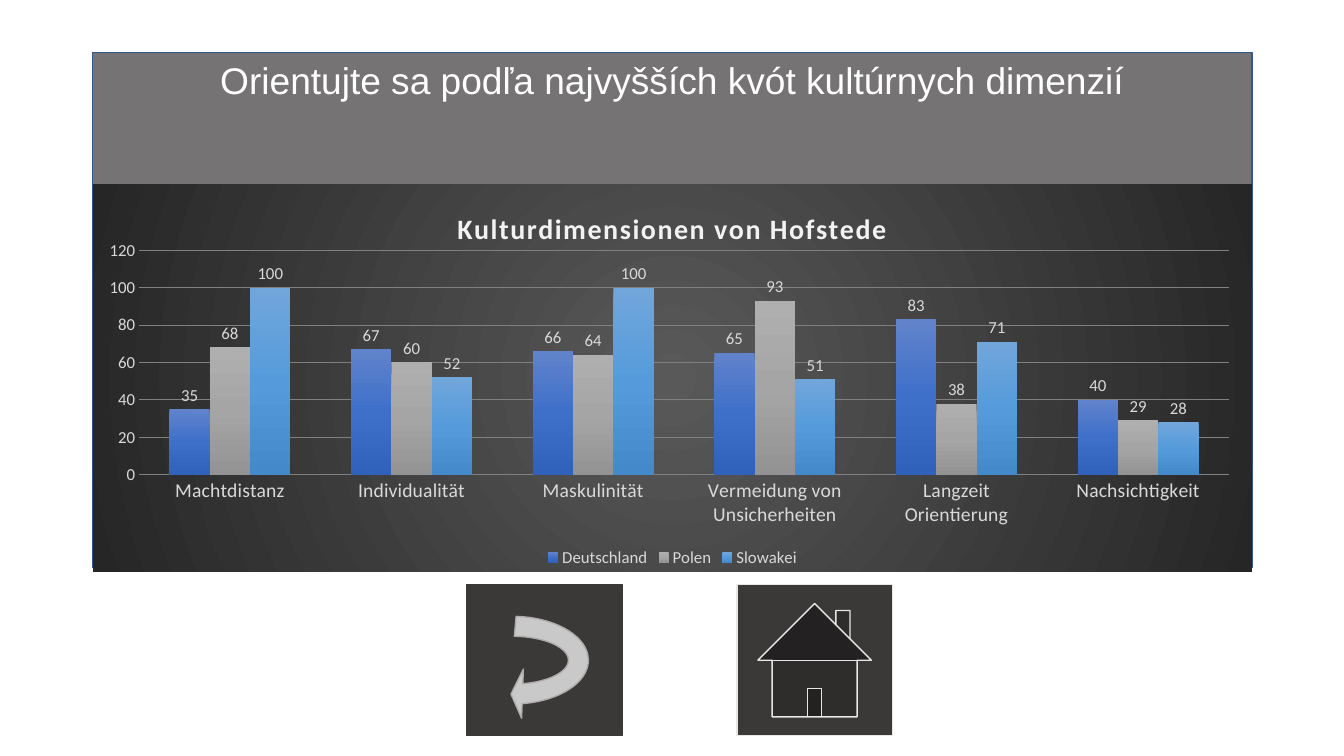
from lxml import etree
from pptx import Presentation
from pptx.chart.data import CategoryChartData
from pptx.dml.color import RGBColor
from pptx.enum.chart import XL_CHART_TYPE, XL_LABEL_POSITION, XL_LEGEND_POSITION, XL_TICK_MARK
from pptx.enum.shapes import MSO_SHAPE
from pptx.enum.text import MSO_ANCHOR, PP_ALIGN
from pptx.oxml import parse_xml
from pptx.oxml.ns import nsdecls, qn
from pptx.util import Inches, Pt

WHITE = RGBColor(0xFF, 0xFF, 0xFF)
PALE = RGBColor(0xF2, 0xF2, 0xF2)
LIGHT = RGBColor(0xD9, 0xD9, 0xD9)
DARK = RGBColor(0x3B, 0x38, 0x38)
SILVER = RGBColor(0xC9, 0xC9, 0xC9)
EDGE = RGBColor(0xAF, 0xAB, 0xAB)
FRAME = RGBColor(0x32, 0x54, 0x91)
HOME = RGBColor(0xE7, 0xE6, 0xE6)
GRID = RGBColor(0x80, 0x80, 0x80)
GLOW = [RGBColor(0x59, 0x59, 0x59), RGBColor(0x26, 0x26, 0x26)]
BLUE = [RGBColor(0x61, 0x83, 0xCB), RGBColor(0x3E, 0x70, 0xCA), RGBColor(0x30, 0x62, 0xBB)]
GRAY = [RGBColor(0xAF, 0xAF, 0xAF), RGBColor(0xA5, 0xA5, 0xA5), RGBColor(0x93, 0x93, 0x93)]
SKY = [RGBColor(0x71, 0xA6, 0xDB), RGBColor(0x55, 0x9B, 0xDB), RGBColor(0x44, 0x8A, 0xCA)]


def write(frame, text, size, color, font, bold=False):
    para = frame.paragraphs[0]
    para.alignment = PP_ALIGN.CENTER
    run = para.add_run()
    run.text = text
    run.font.size = Pt(size)
    run.font.color.rgb = color
    run.font.name = font
    run.font.bold = bold
    return run


def shade(props, colors, way):
    step = 100000 // (len(colors) - 1)
    stops = "".join(f'<a:gs pos="{i * step}"><a:srgbClr val="{color}"/></a:gs>'
                    for i, color in enumerate(colors))
    props.insert(0, parse_xml(f'<a:gradFill {nsdecls("a")} rotWithShape="1">'
                              f'<a:gsLst>{stops}</a:gsLst>{way}</a:gradFill>'))


deck = Presentation()
deck.slide_width = Inches(13.33)
deck.slide_height = Inches(7.5)
slide = deck.slides.add_slide(deck.slide_layouts[6])

shapes = []
for kind, left, top, width, height, fill, line in [
    (MSO_SHAPE.RECTANGLE, 4.63, 5.8, 1.54, 1.5, DARK, DARK),
    (MSO_SHAPE.CIRCULAR_ARROW, 4.5, 5.65, 1.16, 1.8, SILVER, EDGE),
    (MSO_SHAPE.ACTION_BUTTON_HOME, 7.31, 5.8, 1.54, 1.5, DARK, HOME),
    (MSO_SHAPE.RECTANGLE, 0.92, 0.52, 11.5, 5.11, DARK, FRAME),
]:
    shape = slide.shapes.add_shape(kind, Inches(left), Inches(top), Inches(width), Inches(height))
    shape.shadow.inherit = False
    shape.fill.solid()
    shape.fill.fore_color.rgb = fill
    shape.line.color.rgb = line
    shape.line.width = Pt(1)
    shapes.append(shape)

back, arrow, home, panel = shapes
arrow.rotation = 90
for i, value in enumerate([0.17, 11.42, 205.79, 111.05, 0.21]):
    arrow.adjustments[i] = value

tone = panel.fill._xPr.find(qn("a:solidFill"))[0]
etree.SubElement(tone, qn("a:alpha")).set("val", "70000")
panel.text_frame.word_wrap = True
panel.text_frame.vertical_anchor = MSO_ANCHOR.TOP
write(panel.text_frame, "Orientujte sa podľa najvyšších kvót kultúrnych dimenzií",
      size=26.5, color=WHITE, font="Arial")

data = CategoryChartData()
data.categories = ["Machtdistanz", "Individualität", "Maskulinität",
                   "Vermeidung von Unsicherheiten", "Langzeit Orientierung", "Nachsichtigkeit"]
data.add_series("Deutschland", [35, 67, 66, 65, 83, 40])
data.add_series("Polen", [68, 60, 64, 93, 38, 29])
data.add_series("Slowakei", [100, 52, 100, 51, 71, 28])
chart = slide.shapes.add_chart(XL_CHART_TYPE.COLUMN_CLUSTERED, Inches(0.92), Inches(1.83),
                               Inches(11.5), Inches(3.84), data).chart
chart.font.name = "Calibri"
chart.font.size = Pt(10)

title = write(chart.chart_title.text_frame, "Kulturdimensionen von Hofstede",
              size=20, color=PALE, font="Calibri", bold=True)
title.font._element.set("spc", "100")

space = chart._chartSpace
props = parse_xml(f'<c:spPr {nsdecls("c", "a")}><a:ln><a:noFill/></a:ln></c:spPr>')
space.find(qn("c:chart")).addnext(props)
shade(props, GLOW, '<a:path path="circle"><a:fillToRect l="50000" t="50000" r="50000" b="50000"/></a:path>')

plot = chart.plots[0]
plot.gap_width = 150
plot.overlap = 0
plot.vary_by_categories = False
for series, colors in zip(plot.series, [BLUE, GRAY, SKY]):
    shade(series._element.get_or_add_spPr(), colors, '<a:lin ang="5400000" scaled="0"/>')
    labels = series.data_labels
    labels.show_value = True
    labels.position = XL_LABEL_POSITION.OUTSIDE_END
    labels.font.size = Pt(12)
    labels.font.name = "Calibri"
    labels.font.color.rgb = LIGHT

chart.has_legend = True
legend = chart.legend
legend.position = XL_LEGEND_POSITION.BOTTOM
legend.include_in_layout = False
cats, vals = chart.category_axis, chart.value_axis
for axis in [cats, vals]:
    axis.major_tick_mark = XL_TICK_MARK.NONE
    axis.minor_tick_mark = XL_TICK_MARK.NONE
    axis.format.line.fill.background()
for font, size in [(cats.tick_labels.font, 14), (vals.tick_labels.font, 12), (legend.font, 12)]:
    font.size = Pt(size)
    font.name = "Calibri"
    font.color.rgb = LIGHT
vals.minimum_scale = 0
vals.maximum_scale = 120
vals.major_unit = 20
vals.major_gridlines.format.line.color.rgb = GRID
vals.major_gridlines.format.line.width = Pt(0.75)

for tag, spot, inner, places in [
    ("c:title", 1, "", {"x": 0.31, "y": 0.05}),
    ("c:plotArea", 0, '<c:layoutTarget val="inner"/>', {"x": 0.04, "y": 0.17, "w": 0.94, "h": 0.58}),
]:
    part = space.find(qn("c:chart")).find(qn(tag))
    for old in part.findall(qn("c:layout")):
        part.remove(old)
    modes = "".join(f'<c:{key}Mode val="edge"/>' for key in "xy")
    sizes = "".join(f'<c:{key} val="{value}"/>' for key, value in places.items())
    part.insert(spot, parse_xml(f'<c:layout {nsdecls("c")}><c:manualLayout>'
                                f'{inner}{modes}{sizes}</c:manualLayout></c:layout>'))

deck.save("out.pptx")
